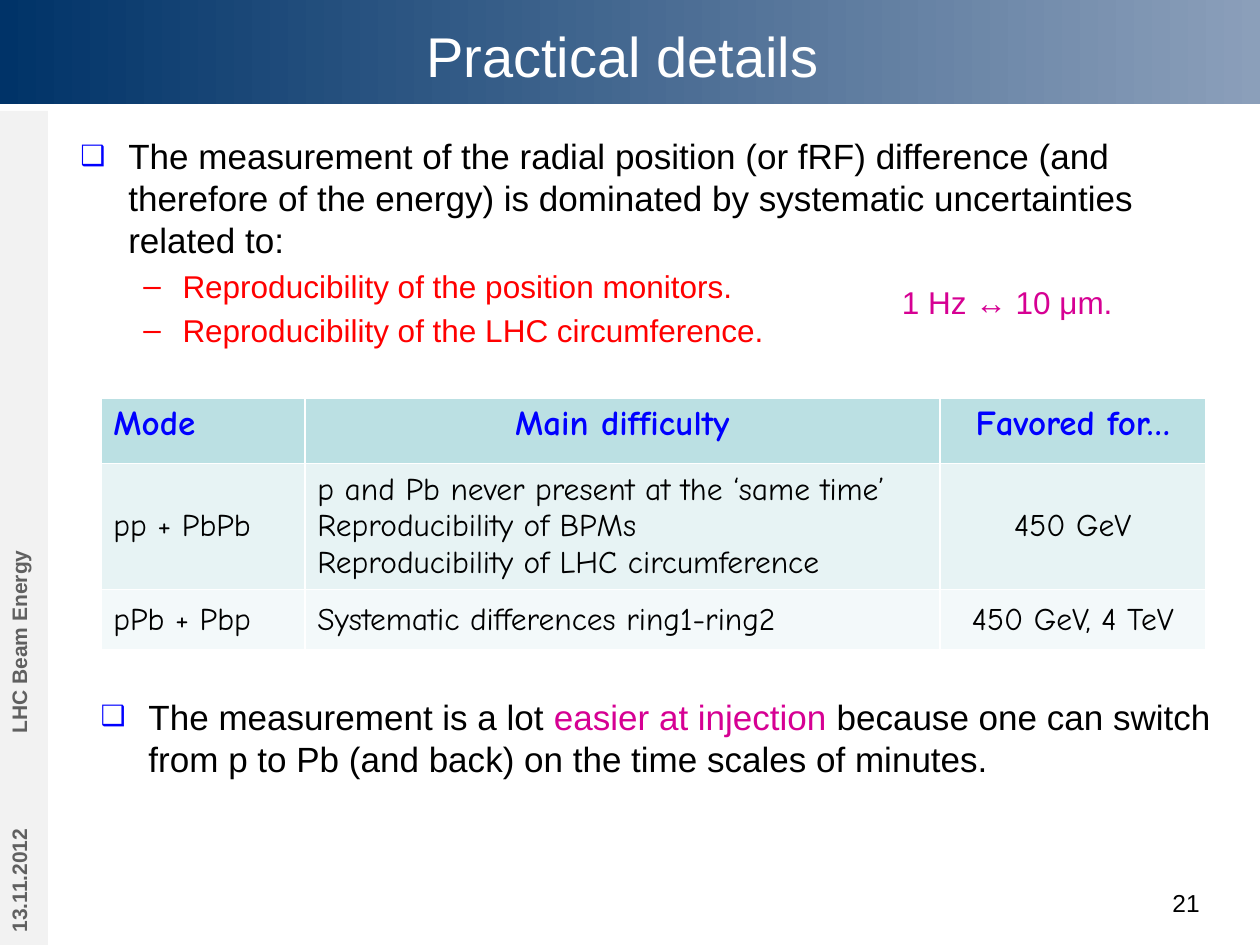
from dataclasses import dataclass

from lxml import etree
from pptx import Presentation
from pptx.dml.color import RGBColor
from pptx.enum.shapes import MSO_SHAPE
from pptx.enum.text import MSO_ANCHOR, PP_ALIGN
from pptx.oxml.ns import qn
from pptx.util import Inches, Pt


@dataclass(frozen=True)
class Theme:
    font: str = "Arial"
    table_font: str = "Comic Neue"
    black: str = "000000"
    white: str = "FFFFFF"
    blue: str = "0000FF"
    red: str = "FF0000"
    magenta: str = "D60093"
    bar_start: str = "003368"
    bar_end: str = "8B9FBA"
    side_fill: str = "F2F2F2"
    side_text: str = "606060"
    head_fill: str = "BBE0E3"
    row_fills: tuple = ("E7F3F4", "F3F9FA")
    title: int = 32
    body: int = 20
    sub: int = 18
    page: int = 14
    side: int = 12


T = Theme()


def rgb(value):
    return RGBColor.from_string(value)


def style(p, size, color, font=T.font, bold=False, align=PP_ALIGN.LEFT):
    p.alignment = align
    for r in p.runs:
        r.font.size, r.font.name, r.font.bold = Pt(size), font, bold
        r.font.color.rgb = rgb(color)


def add_bullet(p, char, margin, hanging, color=None, percent=None):
    pPr = p._p.get_or_add_pPr()
    pPr.set("marL", str(Inches(margin)))
    pPr.set("indent", str(-Inches(hanging)))
    if color:
        clr = etree.SubElement(pPr, qn("a:buClr"))
        etree.SubElement(clr, qn("a:srgbClr"), val=color)
    if percent:
        etree.SubElement(pPr, qn("a:buSzPct"), val=str(percent * 1000))
    etree.SubElement(pPr, qn("a:buFont"), typeface=T.font)
    etree.SubElement(pPr, qn("a:buChar"), char=char)


def add_text(s, x, y, w, h, wrap=True):
    tf = s.shapes.add_textbox(Inches(x), Inches(y), Inches(w), Inches(h)).text_frame
    tf.word_wrap = wrap
    return tf


def add_rect(s, x, y, w, h):
    sp = s.shapes.add_shape(MSO_SHAPE.RECTANGLE, Inches(x), Inches(y), Inches(w), Inches(h))
    sp.shadow.inherit = False
    sp.line.fill.background()
    return sp


def title_bar(s, x, y, w, h):
    bar = add_rect(s, x, y, w, h)
    bar.fill.gradient()
    bar.fill.gradient_angle = 0
    for stop, color in zip(bar.fill.gradient_stops, (T.bar_start, T.bar_end)):
        stop.color.rgb = rgb(color)
    title = s.shapes.title
    s.shapes._spTree.append(title._element)  # in front of the bar
    title.left, title.top = Inches(x + 0.88), Inches(y)
    title.width, title.height = Inches(w - 1.88), Inches(0.88)
    tf = title.text_frame
    tf.text = "Practical details"
    tf.vertical_anchor = MSO_ANCHOR.MIDDLE
    style(tf.paragraphs[0], T.title, T.white, align=PP_ALIGN.CENTER)


def side_label(s, x, y, w, h, text):
    """Fill the upright box with a label that reads upwards."""
    sp = add_rect(s, x + (w - h) / 2, y + (h - w) / 2, h, w)
    sp.rotation = 270
    sp.fill.solid()
    sp.fill.fore_color.rgb = rgb(T.side_fill)
    sp.text_frame.text = text
    sp.text_frame.vertical_anchor = MSO_ANCHOR.TOP
    style(sp.text_frame.paragraphs[0], T.side, T.side_text, bold=True)


def main_point(s, x, y, w, h, parts, subpoints=()):
    """One square-bulleted point of (text, colour) parts, with dashed subpoints."""
    tf = add_text(s, x, y, w, h)
    p = tf.paragraphs[0]
    add_bullet(p, "❑", 0.38, 0.38, T.blue, 80)
    for text, _ in parts:
        p.add_run().text = text
    style(p, T.body, T.black)
    for r, (_, color) in zip(p.runs, parts):
        r.font.color.rgb = rgb(color)
    for text in subpoints:
        p = tf.add_paragraph()
        p.text, p.level = text, 1
        p.space_before = Pt(0.2 * T.sub)
        add_bullet(p, "–", 0.81, 0.31)
        style(p, T.sub, T.red)


def single_line(s, x, y, w, h, text, size, color, align=PP_ALIGN.LEFT, wrap=True):
    p = add_text(s, x, y, w, h, wrap).paragraphs[0]
    p.text = text
    style(p, size, color, align=align)


def mode_table(s, x, y, widths, heights, rows):
    frame = s.shapes.add_table(len(rows), len(widths), Inches(x), Inches(y),
                               Inches(sum(widths)), Inches(sum(heights)))
    table = frame.table
    for column, width in zip(table.columns, widths):
        column.width = Inches(width)
    for i, (row, height) in enumerate(zip(rows, heights)):
        table.rows[i].height = Inches(height)
        head = i == 0
        for j, text in enumerate(row):
            cell = table.cell(i, j)
            cell.text = text
            cell.vertical_anchor = MSO_ANCHOR.TOP if head else MSO_ANCHOR.MIDDLE
            cell.fill.solid()
            cell.fill.fore_color.rgb = rgb(T.head_fill if head else T.row_fills[i - 1])
            centred = j == 2 or (head and j == 1)
            for p in cell.text_frame.paragraphs:
                style(p, T.body if head else T.sub, T.blue if head else T.black,
                      T.table_font, head, PP_ALIGN.CENTER if centred else PP_ALIGN.LEFT)


def details_slide(prs):
    s = prs.slides.add_slide(prs.slide_layouts[5])
    title_bar(s, 0, 0, 10, 0.83)
    side_label(s, 0, 5.92, 0.38, 1.58, "13.11.2012")
    side_label(s, 0, 0.88, 0.38, 5.04, "LHC Beam Energy")
    single_line(s, 8.62, 7, 1, 0.35, "21", T.page, T.black, PP_ALIGN.RIGHT)
    main_point(s, 0.54, 1.02, 9.21, 2.35, [
        ("The measurement of the radial position (or fRF) difference (and therefore of "
         "the energy) is dominated by systematic uncertainties related to:", T.black),
    ], ["Reproducibility of the position monitors.",
        "Reproducibility of the LHC circumference."])
    single_line(s, 7.06, 2.2, 1.97, 0.4, "1 Hz ↔ 10 μm.", T.sub, T.magenta, wrap=False)
    mode_table(s, 0.8, 3.16, (1.62, 5.04, 2.11), (0.52, 1, 0.48), [
        ("Mode", "Main difficulty", "Favored for…"),
        ("pp + PbPb", "p and Pb never present at the ‘same time’\n"
                      "Reproducibility of BPMs\n"
                      "Reproducibility of LHC circumference", "450 GeV"),
        ("pPb + Pbp", "Systematic differences ring1-ring2", "450 GeV, 4 TeV"),
    ])
    main_point(s, 0.7, 5.47, 9.21, 1.18, [
        ("The measurement is a lot ", T.black),
        ("easier at injection ", T.magenta),
        ("because one can switch from p to Pb (and back) on the time scales of minutes.",
         T.black),
    ])


def main():
    prs = Presentation()
    prs.slide_width, prs.slide_height = Inches(10), Inches(7.5)
    details_slide(prs)
    prs.save("out.pptx")


if __name__ == "__main__":
    main()
